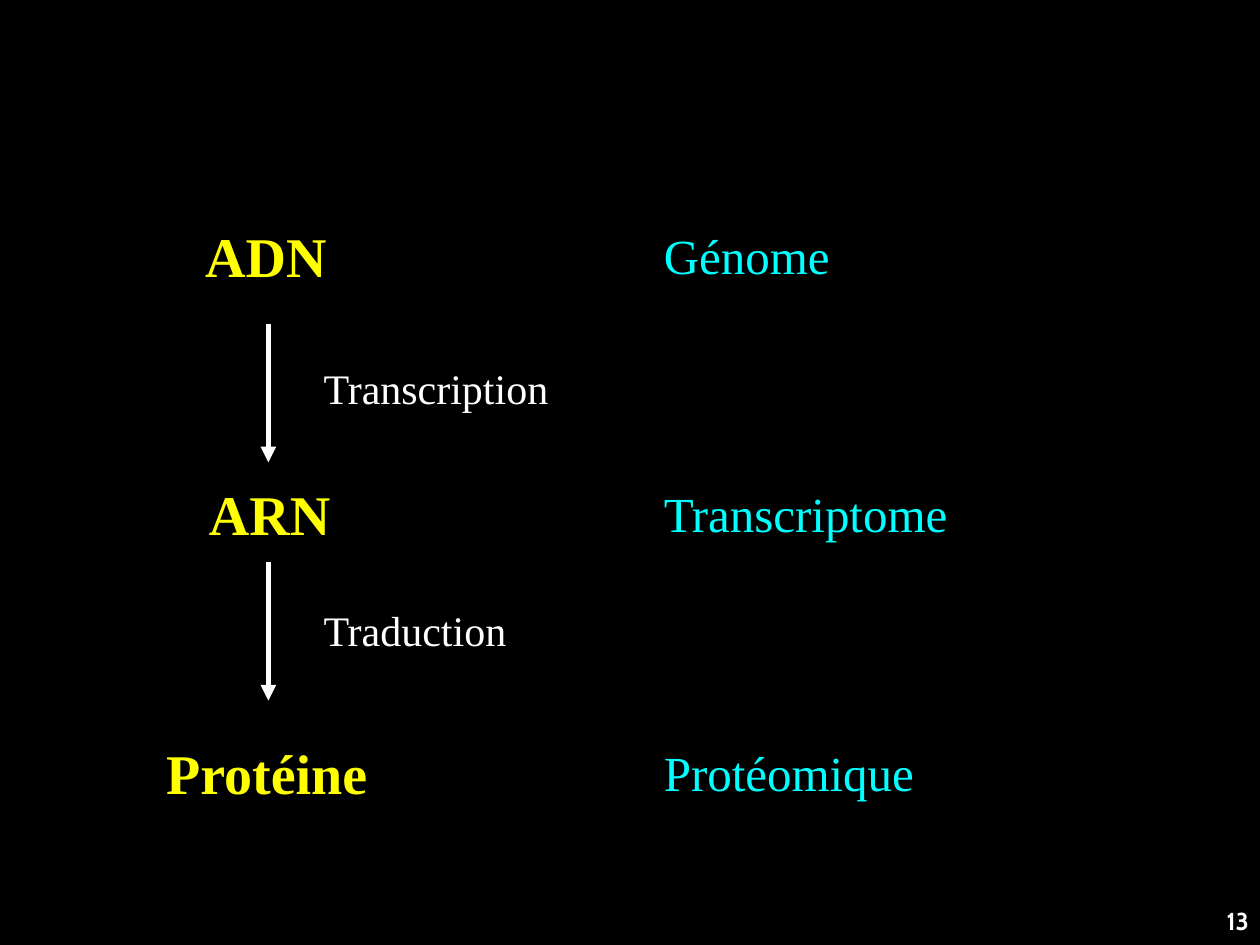
from pptx import Presentation
from pptx.dml.color import RGBColor
from pptx.enum.shapes import MSO_CONNECTOR
from pptx.enum.text import PP_ALIGN
from pptx.oxml.ns import qn
from pptx.util import Inches, Pt
from lxml.etree import SubElement


def rgb(value):
    return RGBColor.from_string(value)


class Deck:
    """Holds the text styles and the current slide."""

    STYLES = {
        "molecule": ("FFFF00", {"name": "Times New Roman", "size": Pt(32), "bold": True}),
        "field": ("00FFFF", {"name": "Times New Roman", "size": Pt(28)}),
        "process": ("FFFFFF", {"name": "Times New Roman", "size": Pt(24)}),
        "number": ("FFFFFF", {"name": "Cabin", "size": Pt(14), "bold": True}),
    }

    def __init__(self, prs):
        self.s = prs.slides.add_slide(prs.slide_layouts[6])
        fill = self.s.background.fill
        fill.solid()
        fill.fore_color.rgb = rgb("000000")

    def text(self, words, style, x, y, w, h, align=PP_ALIGN.LEFT, wrap=False):
        sp = self.s.shapes.add_textbox(Inches(x), Inches(y), Inches(w), Inches(h))
        tf = sp.text_frame
        tf.word_wrap = wrap
        p = tf.paragraphs[0]
        p.alignment = align
        r = p.add_run()
        r.text = words
        color, values = self.STYLES[style]
        for key, value in values.items():
            setattr(r.font, key, value)
        r.font.color.rgb = rgb(color)

    def arrow(self, x, y, length):
        sp = self.s.shapes.add_connector(
            MSO_CONNECTOR.STRAIGHT, Inches(x), Inches(y), Inches(x), Inches(y + length))
        sp.line.color.rgb = rgb("FFFFFF")
        sp.line.width = Pt(3)
        SubElement(sp.line._get_or_add_ln(), qn("a:tailEnd"), type="triangle")
        SubElement(sp._element.spPr, qn("a:effectLst"))


def main():
    prs = Presentation()
    prs.slide_width, prs.slide_height = Inches(10), Inches(7.5)
    deck = Deck(prs)

    levels = [
        ("ADN", 1.53, 1.19, "Génome", 1.52),
        ("ARN", 1.56, 1.19, "Transcriptome", 2.47),
        ("Protéine", 1.22, 1.81, "Protéomique", 2.19),
    ]
    for i, (molecule, x, w, field, field_w) in enumerate(levels):
        y = 1.71 + 2.05 * i
        deck.text(molecule, "molecule", x, y, w, 0.63)
        deck.text(field, "field", 5.17, y + 0.03, field_w, 0.57)

    steps = [("Transcription", 2.57, 2.83, 1.99), ("Traduction", 4.46, 4.75, 1.66)]
    for process, arrow_y, y, w in steps:
        deck.arrow(2.13, arrow_y, 1.1)
        deck.text(process, "process", 2.47, y, w, 0.5)

    deck.text("13", "number", 7.68, 7.14, 2.33, 0.52, PP_ALIGN.RIGHT, True)
    prs.save("out.pptx")


if __name__ == "__main__":
    main()
